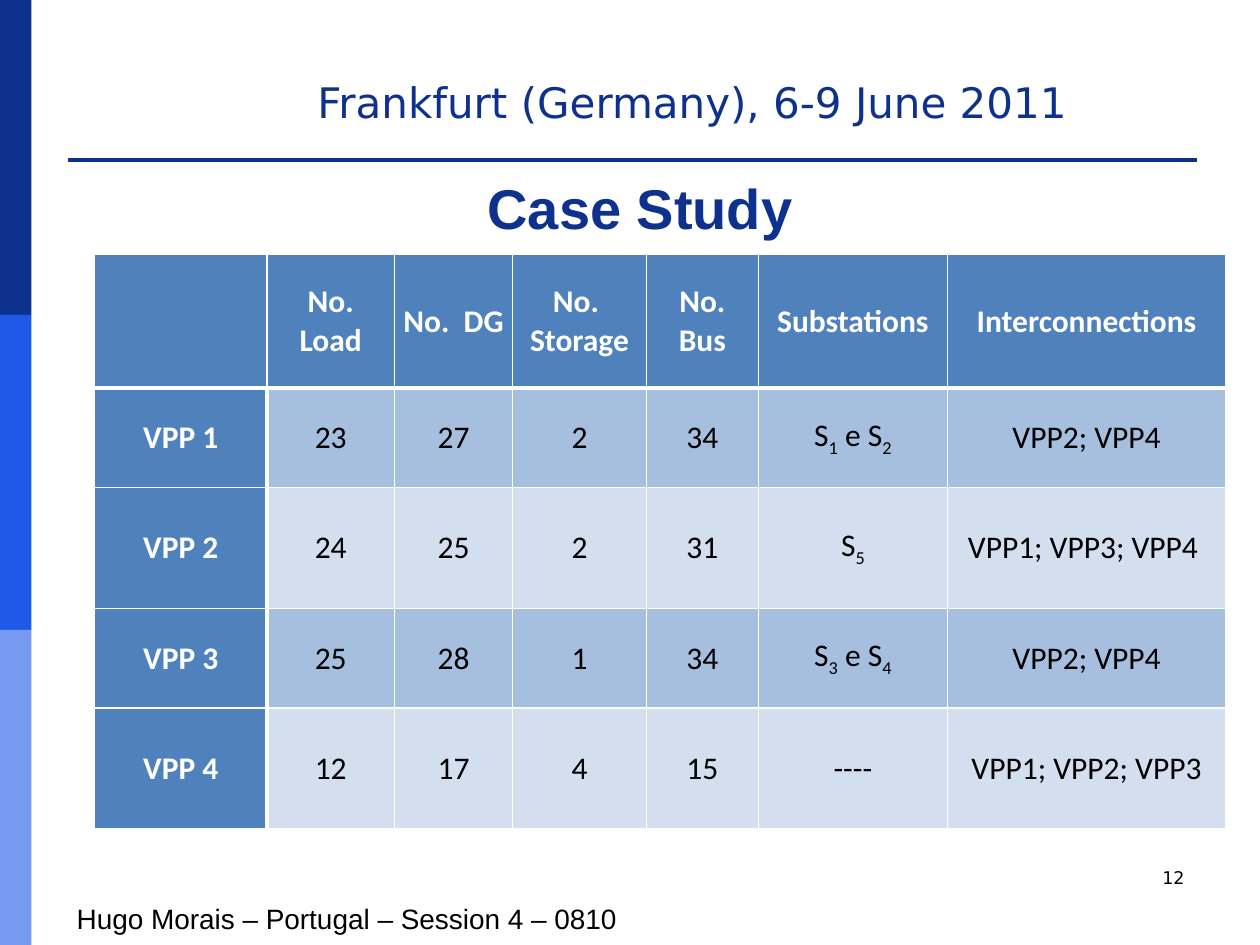
from dataclasses import dataclass

from lxml import etree
from pptx import Presentation
from pptx import util as u
from pptx.dml.color import RGBColor
from pptx.enum import shapes, text
from pptx.oxml.ns import qn


@dataclass(frozen=True)
class Theme:
    navy: str = "0E318D"
    blue: str = "1F59E9"
    sky: str = "779AF1"
    head: str = "4F81BD"
    bands: tuple = ("A7BFDE", "D3DFEE")
    white: str = "FFFFFF"
    black: str = "000000"
    sans: str = "Arial"
    wide: str = "DejaVu Sans"
    grid: str = "Calibri"
    title: int = 32
    event: int = 24
    cell: int = 18
    foot: int = 16
    page: int = 10
    tiny: int = 8
    rule: float = 2.25
    thin: int = 1
    thick: int = 3


T = Theme()
LEFT, MID, RIGHT = text.PP_ALIGN.LEFT, text.PP_ALIGN.CENTER, text.PP_ALIGN.RIGHT

WIDTHS = (1.37, 1.01, 0.94, 1.06, 0.89, 1.5, 2.21)
HEIGHTS = (1.06, 0.79, 0.96, 0.79, 0.96)
# A cell given as a tuple alternates normal and subscript runs.
ROWS = (
    ("", "No. Load", "No.  DG", "No.  Storage", "No. Bus", "Substations", "Interconnections"),
    ("VPP 1", "23", "27", "2", "34", ("S", "1", " e S", "2"), "VPP2; VPP4"),
    ("VPP 2", "24", "25", "2", "31", ("S", "5"), "VPP1; VPP3; VPP4 "),
    ("VPP 3", "25", "28", "1", "34", ("S", "3", " e S", "4"), "VPP2; VPP4"),
    ("VPP 4", "12", "17", "4", "15", "----", "VPP1; VPP2; VPP3"),
)


def add_run(para, words, face, size, color, bold=False):
    run = para.add_run()
    run.text = words
    font = run.font
    font.name, font.size, font.bold = face, u.Pt(size), bold
    font.color.rgb = RGBColor.from_string(color)
    return run


def add_bar(slide, top, high, color):
    bar = slide.shapes.add_shape(
        shapes.MSO_SHAPE.RECTANGLE, 0, u.Inches(top), u.Inches(0.25), u.Inches(high))
    bar.shadow.inherit = False
    bar.fill.solid()
    bar.fill.fore_color.rgb = RGBColor.from_string(color)
    bar.line.fill.background()


def add_label(slide, area, words, face, size, color, align=LEFT, bold=False):
    box = slide.shapes.add_textbox(*map(u.Inches, area))
    box.text_frame.word_wrap = True
    para = box.text_frame.paragraphs[0]
    para.alignment = align
    add_run(para, words, face, size, color, bold)
    return para


def add_table(slide, left, top, widths, heights):
    frame = slide.shapes.add_table(
        len(heights), len(widths), u.Inches(left), u.Inches(top),
        u.Inches(sum(widths)), u.Inches(sum(heights)))
    table = frame.table
    for col, width in zip(table.columns, widths):
        col.width = u.Inches(width)
    for row, height in zip(table.rows, heights):
        row.height = u.Inches(height)
    return table


def set_edges(cell, sizes, color):
    """Draw the left, right, top and bottom edges; a size of 0 hides one."""
    props = cell._tc.get_or_add_tcPr()
    for side, size in zip("LRTB", sizes):
        edge = etree.SubElement(props, qn(f"a:ln{side}"), w=str(int(u.Pt(size))))
        if size:
            fill = etree.SubElement(edge, qn("a:solidFill"))
            etree.SubElement(fill, qn("a:srgbClr"), val=color)
        else:
            etree.SubElement(edge, qn("a:noFill"))


def set_inset(cell, side):
    cell.margin_left = cell.margin_right = u.Inches(side)
    cell.margin_top = cell.margin_bottom = 0


def add_rule(slide, left, top, width, height):
    """Add a one-cell table that shows only its bottom edge."""
    table = add_table(slide, left, top, (width,), (height,))
    table.first_row = table.horz_banding = False
    cell = table.cell(0, 0)
    set_edges(cell, (0, 0, 0, T.rule), T.navy)
    cell.fill.background()
    set_inset(cell, 0)
    para = cell.text_frame.paragraphs[0]
    etree.SubElement(para._p, qn("a:endParaRPr"), sz=str(T.tiny * 100))


def fill_cell(cell, words, row, col):
    head = row == 0 or col == 0
    heavy = (row and col == 1, row and col == 0, row == 1, row == 0)
    set_edges(cell, [T.thick if edge else T.thin for edge in heavy], T.white)
    cell.fill.solid()
    shade = T.head if head else T.bands[(row - 1) % 2]
    cell.fill.fore_color.rgb = RGBColor.from_string(shade)
    cell.vertical_anchor = text.MSO_ANCHOR.MIDDLE
    set_inset(cell, 0.07)
    para = cell.text_frame.paragraphs[0]
    para.alignment = MID
    parts = words if isinstance(words, tuple) else (words,)
    for i, part in enumerate(parts):
        if part:
            run = add_run(para, part, T.grid, T.cell, T.white if head else T.black, head)
            if i % 2:
                run.font._element.set("baseline", "-25000")


def add_grid(slide, left, top):
    table = add_table(slide, left, top, WIDTHS, HEIGHTS)
    for r, row in enumerate(ROWS):
        for c, words in enumerate(row):
            fill_cell(table.cell(r, c), words, r, c)


def main():
    deck = Presentation()
    deck.slide_width, deck.slide_height = u.Inches(10), u.Inches(7.5)
    slide = deck.slides.add_slide(deck.slide_layouts[6])

    for i, color in enumerate((T.navy, T.blue, T.sky)):
        add_bar(slide, 2.5 * i, 2.5, color)
    add_rule(slide, 0.54, 1.07, 8.96, 0.2)
    add_label(slide, (2.42, 0.56, 6.58, 0.5), "Frankfurt (Germany), 6-9 June 2011",
              T.wide, T.event, T.navy)
    add_label(slide, (0.51, 7.11, 7.88, 0.37), "Hugo Morais – Portugal – Session 4 – 0810",
              T.sans, T.foot, T.black)
    title = add_label(slide, (0.59, 1.39, 8.98, 0.59), "Case Study",
                      T.sans, T.title, T.navy, MID, True)
    title.line_spacing = 0.9
    add_grid(slide, 0.75, 2.02)
    add_label(slide, (7.17, 6.83, 2.33, 0.5), "12", T.wide, T.page, T.black, RIGHT)
    deck.save("out.pptx")


if __name__ == "__main__":
    main()
